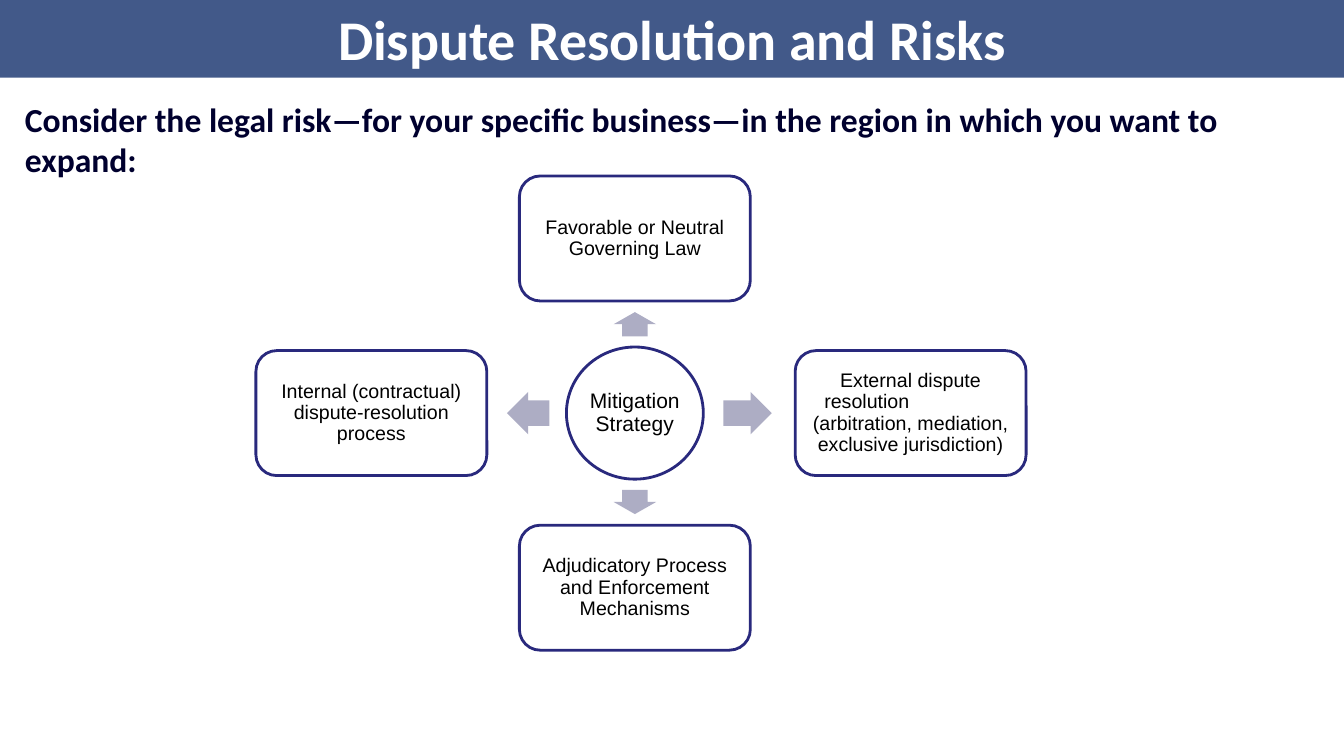
from lxml.etree import SubElement
from pptx import Presentation
from pptx.dml.color import RGBColor
from pptx.enum.shapes import MSO_SHAPE
from pptx.enum.text import MSO_ANCHOR, PP_ALIGN
from pptx.oxml.ns import qn
from pptx.util import Cm, Pt

SLIDE_WIDTH, SLIDE_HEIGHT = 33.87, 19.05
HUB_X, HUB_Y = 16, 10.41
BOX_WIDTH, BOX_HEIGHT = 5.82, 3.15
ARROW_BREADTH = 1.07
WHITE, BLACK, NAVY, OUTLINE, ARROW = "FFFFFF", "000000", "00002E", "29297D", "ADADC4"

# Each strategy: box offset from the hub, arrow offset, arrow length, rotation, text
STRATEGIES = [
    ((0, -4.4), (0, -2.24), 0.61, 270, ["Favorable or Neutral Governing Law"]),
    ((6.95, 0), (2.84, 0), 1.22, 0,
     ["External dispute", "resolution", "(arbitration, mediation, exclusive jurisdiction)"]),
    ((0, 4.4), (0, 2.24), 0.61, 90, ["Adjudicatory Process and Enforcement Mechanisms"]),
    ((-6.64, 0), (-2.69, 0), 1.07, 180, ["Internal (contractual) dispute-resolution process"]),
]


def color(hex_code):
    return RGBColor.from_string(hex_code)


def add_filled(slide, preset, left, top, width, height, fill):
    shape = slide.shapes.add_shape(preset, Cm(left), Cm(top), Cm(width), Cm(height))
    shape.shadow.inherit = False
    shape.fill.solid()
    shape.fill.fore_color.rgb = color(fill)
    shape.line.fill.background()
    return shape


def add_centered(slide, preset, dx, dy, width, height, fill):
    """Place a shape by the offset of its middle from the hub, in centimetres."""
    return add_filled(slide, preset, HUB_X + dx - width / 2, HUB_Y + dy - height / 2,
                      width, height, fill)


def set_opacity(shape, percent):
    rgb = shape.fill._xPr.find(qn("a:solidFill")).find(qn("a:srgbClr"))
    SubElement(rgb, qn("a:alpha")).set("val", str(percent * 1000))


def write(paragraph, text, size, font, hex_code, bold=False, align=PP_ALIGN.CENTER):
    paragraph.alignment = align
    run = paragraph.add_run()
    run.text = text
    run.font.name = font
    run.font.size = Pt(size)
    run.font.bold = bold
    run.font.color.rgb = color(hex_code)


def add_node(slide, preset, dx, dy, width, height, lines, size):
    node = add_centered(slide, preset, dx, dy, width, height, WHITE)
    node.line.color.rgb = color(OUTLINE)
    node.line.width = Pt(2)
    frame = node.text_frame
    frame.word_wrap = True
    frame.vertical_anchor = MSO_ANCHOR.MIDDLE
    frame.margin_left = frame.margin_right = Cm(0.05)
    frame.margin_top = frame.margin_bottom = Cm(0.05)
    for index, line in enumerate(lines):
        paragraph = frame.add_paragraph() if index else frame.paragraphs[0]
        paragraph.line_spacing = 0.9
        write(paragraph, line, size, "Arial", BLACK)
    return node


def add_arrow(slide, dx, dy, length, rotation):
    arrow = add_centered(slide, MSO_SHAPE.RIGHT_ARROW, dx, dy, length, ARROW_BREADTH, ARROW)
    arrow.adjustments[0] = 0.6
    arrow.adjustments[1] = 0.5
    arrow.rotation = rotation


def indent_left(paragraph, indent):
    paragraph.alignment = PP_ALIGN.LEFT
    paragraph._p.get_or_add_pPr().set("marL", str(Cm(indent)))


def add_title(slide, text):
    banner = add_filled(slide, MSO_SHAPE.RECTANGLE, 0, -0.05, SLIDE_WIDTH, 2.01, "002060")
    set_opacity(banner, 74)
    banner.text_frame.word_wrap = True
    banner.text_frame.vertical_anchor = MSO_ANCHOR.MIDDLE
    write(banner.text_frame.paragraphs[0], text, 40, "Calibri", WHITE, bold=True)


def add_lead(slide, text):
    lead = slide.shapes.add_textbox(Cm(0.38), Cm(2.36), Cm(33.43), Cm(1.9))
    lead.text_frame.word_wrap = True
    write(lead.text_frame.paragraphs[0], text, 24, "Calibri", NAVY, True, PP_ALIGN.LEFT)


def main():
    deck = Presentation()
    deck.slide_width, deck.slide_height = Cm(SLIDE_WIDTH), Cm(SLIDE_HEIGHT)
    slide = deck.slides.add_slide(deck.slide_layouts[6])
    add_title(slide, "Dispute Resolution and Risks")
    add_node(slide, MSO_SHAPE.OVAL, 0, 0, 3.45, 3.33, ["Mitigation Strategy"], 15)
    for box_offset, arrow_offset, length, rotation, lines in STRATEGIES:
        add_arrow(slide, *arrow_offset, length, rotation)
        box = add_node(slide, MSO_SHAPE.ROUNDED_RECTANGLE, *box_offset,
                       BOX_WIDTH, BOX_HEIGHT, lines, 14)
        if len(lines) > 1:
            indent_left(box.text_frame.paragraphs[1], 0.53)
    add_lead(slide, "Consider the legal risk—for your specific business—"
                    "in the region in which you want to expand:")
    deck.save("out.pptx")


if __name__ == "__main__":
    main()
